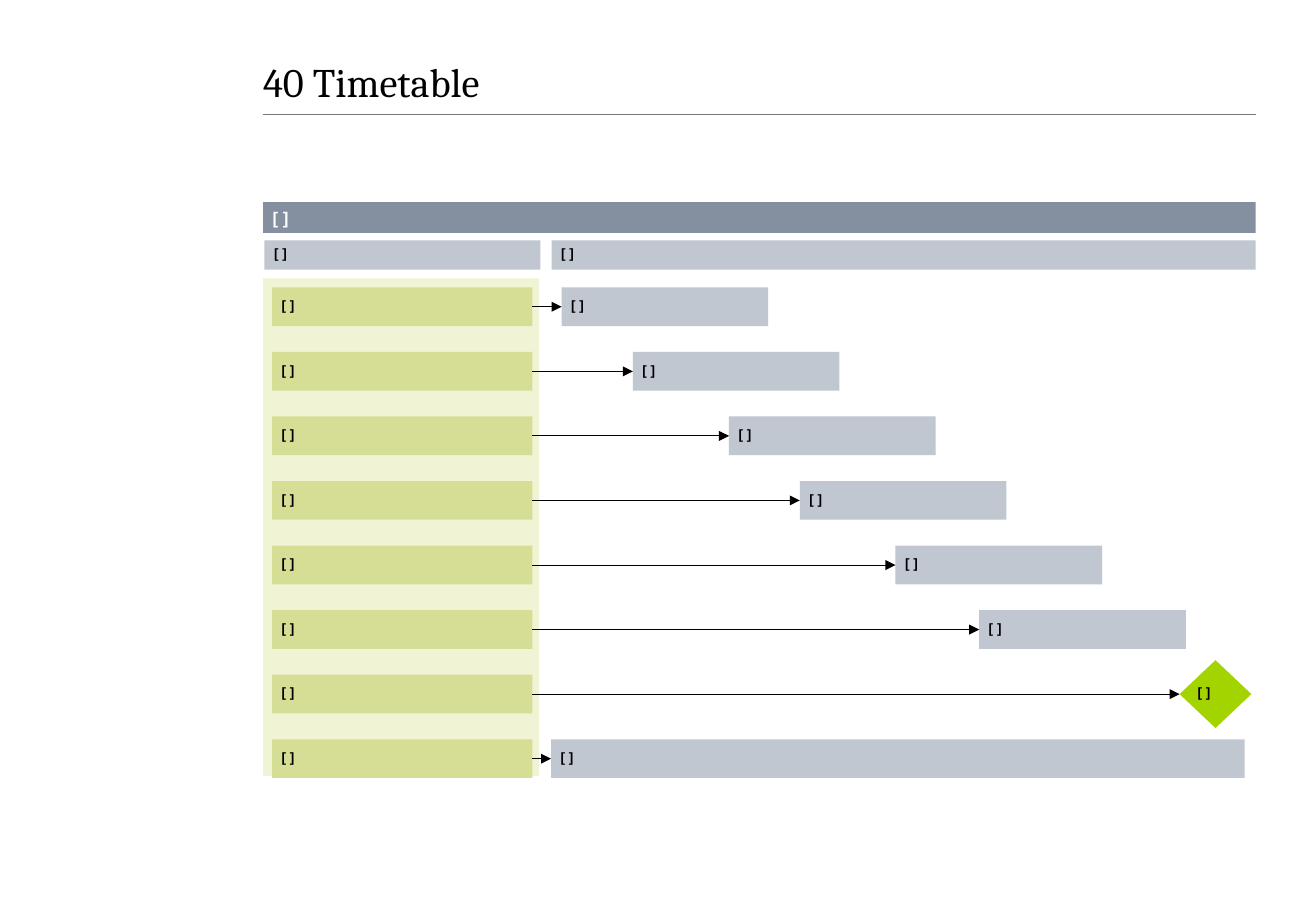
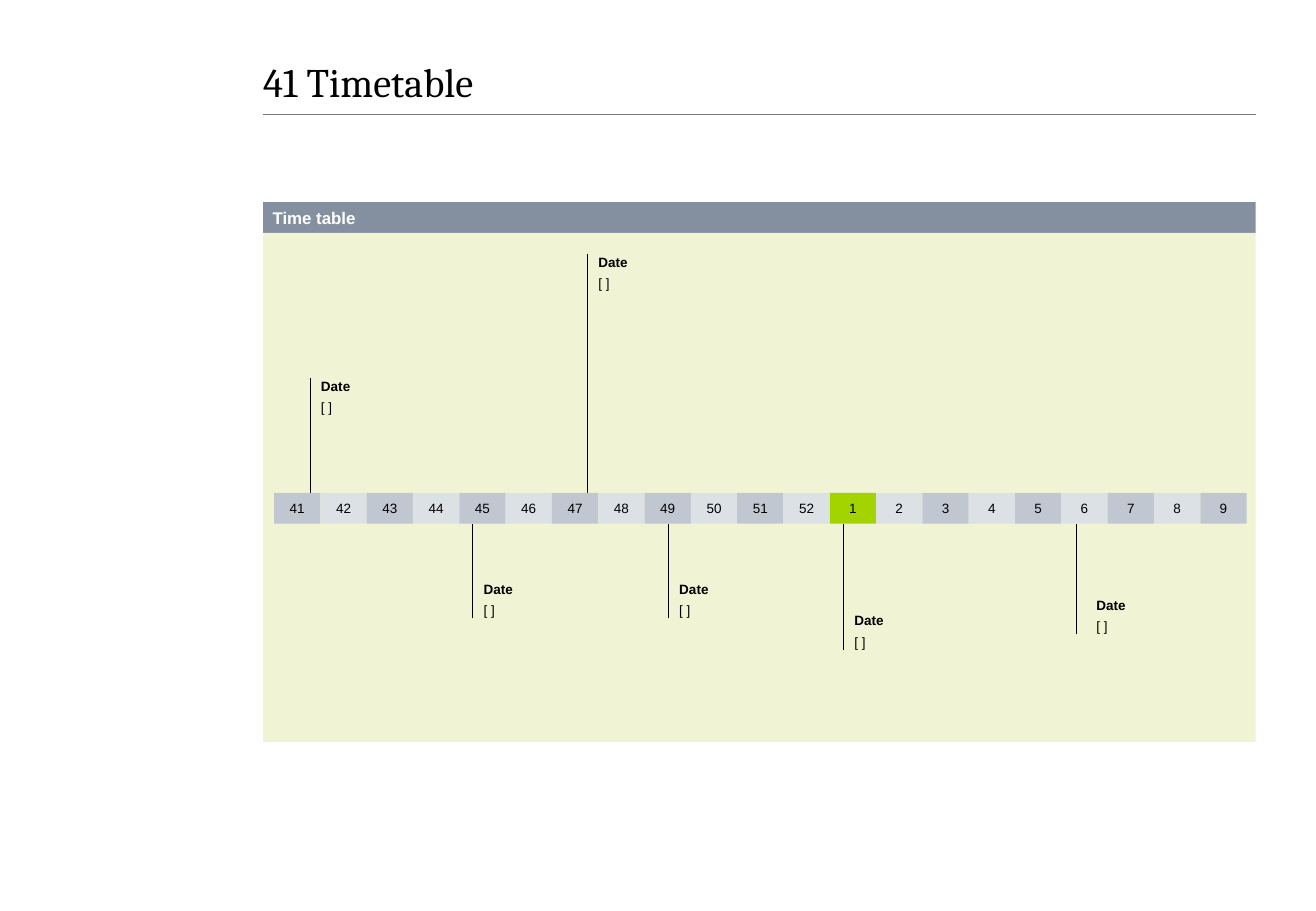
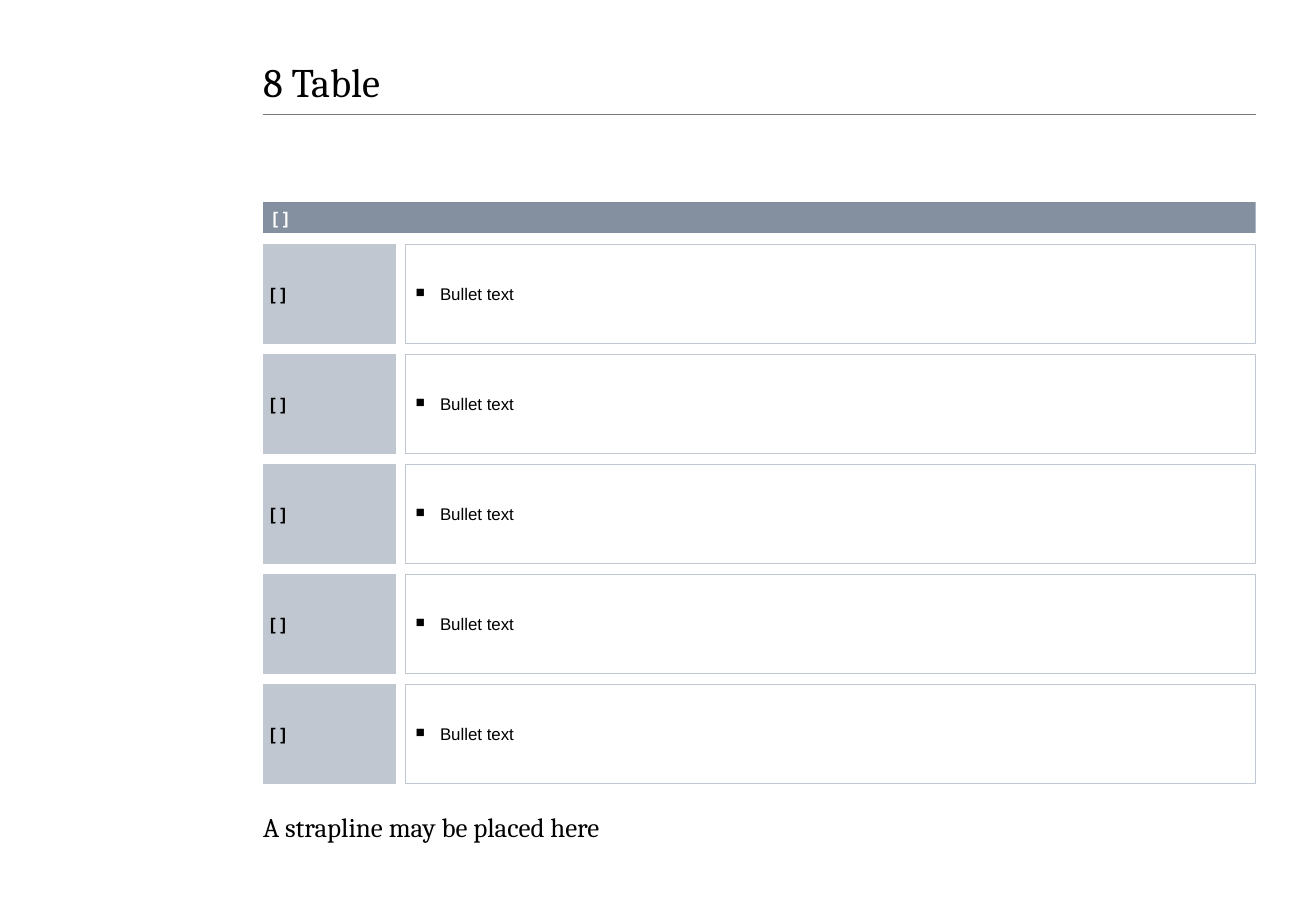
from lxml import etree
from pptx import Presentation
from pptx.dml.color import RGBColor
from pptx.enum import shapes, text
from pptx.oxml import ns
from pptx.util import Cm, Pt

BLACK = RGBColor(0x00, 0x00, 0x00)
WHITE = RGBColor(0xFF, 0xFF, 0xFF)
RULE = RGBColor(0x78, 0x78, 0x78)
SLATE = RGBColor(0x84, 0x8F, 0xA0)
GREY = RGBColor(0xC1, 0xC7, 0xD0)
PALE = RGBColor(0xDB, 0xE1, 0xE5)
LIME = RGBColor(0xA3, 0xD4, 0x00)
OLIVE = RGBColor(0xD5, 0xDE, 0x94)
CREAM = RGBColor(0xF0, 0xF4, 0xD4)

SANS, SERIF = "Arial", "Cambria"
LEFT, WIDE = 5.5, 20.75
RECT = shapes.MSO_SHAPE.RECTANGLE
DIAMOND = shapes.MSO_SHAPE.DIAMOND
MID, TOP, LOW = text.MSO_ANCHOR.MIDDLE, text.MSO_ANCHOR.TOP, text.MSO_ANCHOR.BOTTOM
START, CENTRE = text.PP_ALIGN.LEFT, text.PP_ALIGN.CENTER
BRACKET = "[ ]"


def add_bullet(para):
    """Give a paragraph a square bullet and a hanging indent."""
    props = para._p.get_or_add_pPr()
    props.set("marL", str(Cm(0.53)))
    props.set("indent", str(Cm(-0.51)))
    etree.SubElement(props, ns.qn("a:buSzPct"), val="75000")
    etree.SubElement(props, ns.qn("a:buChar"), char="■")


def write(shape, *lines, size=8, font=SANS, color=BLACK, bold=False, align=START,
          anchor=MID, inset=(0, 0, 0, 0), lead=None, gap=0, wrap=True, bullet=False):
    """Fill a shape with lines of text; bold applies to the first line."""
    frame = shape.text_frame
    frame.auto_size = text.MSO_AUTO_SIZE.NONE
    frame.word_wrap = wrap
    frame.vertical_anchor = anchor
    (frame.margin_left, frame.margin_top,
     frame.margin_right, frame.margin_bottom) = map(Cm, inset)
    for row, line in enumerate(lines):
        para = frame.add_paragraph() if row else frame.paragraphs[0]
        if bullet:
            add_bullet(para)
        para.alignment = align
        para.line_spacing = lead
        para.space_before = Pt(gap if row else 0)
        run = para.add_run()
        run.text = line
        run.font.name, run.font.size = font, Pt(size)
        run.font.bold = bold and row == 0
        run.font.color.rgb = color


def add_box(slide, left, top, width, height, fill=None, line=None, kind=RECT):
    """Draw a flat preset shape."""
    box = slide.shapes.add_shape(kind, Cm(left), Cm(top), Cm(width), Cm(height))
    box.shadow.inherit = False
    if fill is None:
        box.fill.background()
    else:
        box.fill.solid()
        box.fill.fore_color.rgb = fill
    if line is None:
        box.line.fill.background()
    else:
        box.line.color.rgb = line
        box.line.width = Pt(0.5)
    return box


def add_line(slide, left=0, top=0, right=0, low=0, color=BLACK):
    """Draw a thin straight line without a shadow."""
    line = slide.shapes.add_connector(
        shapes.MSO_CONNECTOR.STRAIGHT, Cm(left), Cm(top), Cm(right), Cm(low))
    line.line.color.rgb = color
    line.line.width = Pt(0.5)
    etree.SubElement(line._element.spPr, ns.qn("a:effectLst"))
    return line


def add_arrow(slide, source, target):
    """Join the right side of one shape to the left side of another."""
    arrow = add_line(slide)
    arrow.begin_connect(source, 3)
    arrow.end_connect(target, 1)
    stroke = arrow._element.spPr.find(ns.qn("a:ln"))
    etree.SubElement(stroke, ns.qn("a:tailEnd"), type="triangle")


def add_text(slide, left, top, width, height, *lines, **style):
    """Place a text box."""
    box = slide.shapes.add_textbox(Cm(left), Cm(top), Cm(width), Cm(height))
    write(box, *lines, **style)


def add_page(deck, title, band):
    """Start a slide with its title, rule and header band."""
    slide = deck.slides.add_slide(deck.slide_layouts[5])
    head = slide.shapes.title
    head.left, head.top, head.width, head.height = map(Cm, (LEFT, 1.35, WIDE, 1))
    write(head, title, size=24, font=SERIF, inset=(0, 0, 0, 0.3))
    add_line(slide, LEFT, 2.39, LEFT + WIDE, 2.39, RULE)
    bar = add_box(slide, LEFT, 4.23, WIDE, 0.64, SLATE)
    write(bar, band, size=10, color=WHITE, bold=True, inset=(0.2, 0, 0.1, 0))
    return slide


def add_item(slide, left, top, width, height, fill, lead=0.8):
    """Draw a filled bar with a bold bracket."""
    item = add_box(slide, left, top, width, height, fill)
    write(item, BRACKET, bold=True, lead=lead, inset=(0.2, 0, 0, 0))
    return item


def add_steps(deck):
    """Build the timetable of staggered steps."""
    slide = add_page(deck, "40 Timetable", BRACKET)
    for left, width in ((5.53, 5.77), (11.53, 14.72)):
        add_item(slide, left, 5.03, width, 0.61, GREY, lead=0.7)
    add_box(slide, LEFT, 5.82, 5.77, 10.41, CREAM)
    first, pitch, high = 6.01, 1.35, 0.81
    bars = [(left, 4.32) for left in (11.74, 13.23, 15.24, 16.72, 18.72, 20.47)]
    bars += [(24.66, 1.5), (11.52, 14.5)]
    for row, (left, width) in enumerate(bars):
        top = first + row * pitch
        task = add_item(slide, 5.69, top, 5.44, high, OLIVE)
        if row == 6:
            tall = 1.42
            goal = add_box(slide, left, top + (high - tall) / 2, width, tall, LIME,
                           kind=DIAMOND)
            write(goal, BRACKET, bold=True, lead=0.8, wrap=False)
        else:
            goal = add_item(slide, left, top, width, high, GREY)
        add_arrow(slide, task, goal)


def add_weeks(deck):
    """Build the timetable of weeks with dated marks."""
    slide = add_page(deck, "41 Timetable", "Time table")
    add_box(slide, LEFT, 4.87, WIDE, 10.65, CREAM)
    strip, high = 10.31, 0.64
    marks = ((6.48, 7.9, 0.03), (12.28, 5.31, 0.03), (9.88, 12.93, 0.03),
             (13.97, 12.93, 0.03), (17.63, 13.59, 0.03), (22.51, 13.26, 0.21))
    for left, end, shift in marks:
        above = end < strip
        add_line(slide, left, end, left, strip if above else strip + high)
        add_text(slide, left + shift, end if above else end - 1, 2.75, 1,
                 "Date", BRACKET, bold=True, gap=3, inset=(0.2, 0, 0, 0),
                 anchor=TOP if above else LOW)
    weeks = [*range(41, 53), *range(1, 10)]
    step = 20.33 / len(weeks)
    for spot, week in enumerate(weeks):
        fill = LIME if week == 1 else PALE if spot % 2 else GREY
        cell = add_box(slide, 5.73 + spot * step, strip, step, high, fill)
        write(cell, str(week), align=CENTRE)


def add_rows(deck):
    """Build the table of labelled bullet rows."""
    slide = add_page(deck, "8 Table", BRACKET)
    for row in range(5):
        top = 5.11 + row * 2.3
        label = add_box(slide, LEFT, top, 2.77, 2.08, GREY, GREY)
        write(label, BRACKET, size=10, bold=True, inset=(0.15, 0.1, 0.15, 0.1))
        body = add_box(slide, 8.47, top, 17.78, 2.08, line=GREY)
        write(body, "Bullet text", size=10, bullet=True, inset=(0.2, 0.2, 0.2, 0.2))
    add_text(slide, LEFT, 16.94, WIDE, 0.61, "A strapline may be placed here",
             size=16, font=SERIF, anchor=TOP)


def main():
    """Build and save the slides."""
    deck = Presentation()
    deck.slide_width, deck.slide_height = Cm(27.51), Cm(19.05)
    add_steps(deck)
    add_weeks(deck)
    add_rows(deck)
    deck.save("out.pptx")


if __name__ == "__main__":
    main()
